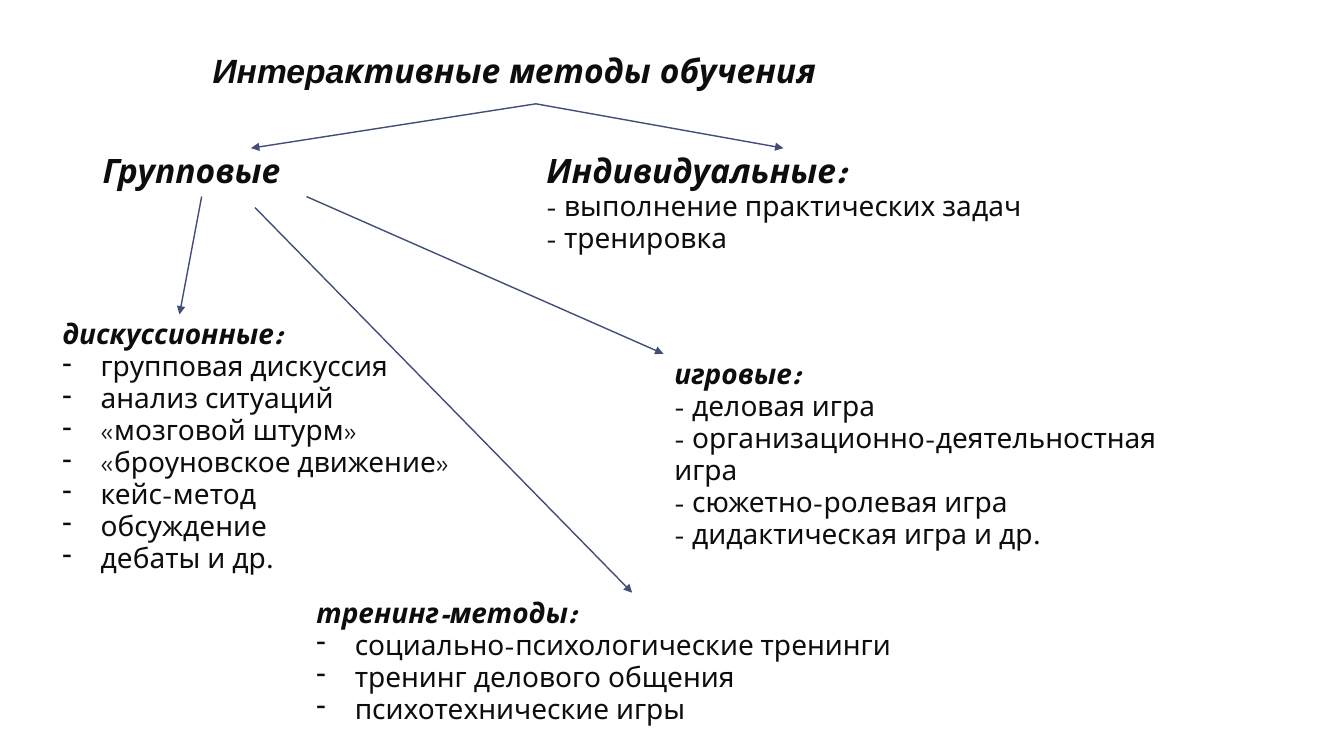
from dataclasses import dataclass

import pptx
import pptx.dml.color
import pptx.enum.dml
import pptx.enum.shapes
import pptx.enum.text
import pptx.oxml
import pptx.oxml.ns
import pptx.shapes.autoshape
import pptx.shapes.connector
import pptx.slide
import pptx.util
from lxml import etree

EMU_PER_PX = 9144
INK = pptx.dml.color.RGBColor(0x0D, 0x0D, 0x0D)
ARROW = pptx.dml.color.RGBColor(0x41, 0x4E, 0x77)
FONT = "League Spartan"
TITLE_SIZE = 24
BODY_SIZE = 20
INDENT = 38
BOTTOM = 2


@dataclass(frozen=True)
class Block:
    left: int
    top: int
    width: int
    height: int
    heading: str
    items: tuple[str, ...] = ()
    heading_size: int = BODY_SIZE
    bulleted: bool = False


@dataclass(frozen=True)
class Arrow:
    start: tuple[int, int]
    end: tuple[int, int]
    from_title: bool = False


BLOCKS = (
    Block(92, 147, 283, 48, "Групповые", heading_size=TITLE_SIZE),
    Block(532, 147, 528, 112, "Индивидуальные:",
          ("- выполнение практических задач", "- тренировка"),
          heading_size=TITLE_SIZE),
    Block(52, 312, 449, 266, "дискуссионные:",
          ("групповая дискуссия", "анализ ситуаций", "«мозговой штурм»",
           "«броуновское движение»", "кейс-метод", "обсуждение",
           "дебаты и др."),
          bulleted=True),
    Block(659, 351, 528, 247, "игровые:",
          ("- деловая игра", "- организационно-деятельностная игра",
           "- сюжетно-ролевая игра", "- дидактическая игра и др.")),
    Block(304, 588, 819, 138, "тренинг-методы:",
          ("социально-психологические тренинги",
           "тренинг делового общения", "психотехнические игры"),
          bulleted=True),
)

ARROWS = (
    Arrow((531, 103), (249, 147), from_title=True),
    Arrow((531, 103), (777, 147), from_title=True),
    Arrow((200, 195), (178, 312)),
    Arrow((253, 206), (627, 588)),
    Arrow((304, 195), (658, 351)),
)


def px(length: int) -> pptx.util.Emu:
    return pptx.util.Emu(length * EMU_PER_PX)


def style_paragraph(para, size: int, strong: bool) -> None:
    para.font.size = pptx.util.Pt(size)
    para.font.bold = strong
    para.font.italic = strong
    para.font.color.rgb = INK


def add_bullet(para) -> None:
    properties = para._p.get_or_add_pPr()
    properties.set("marL", str(px(INDENT)))
    properties.set("indent", str(-px(INDENT)))
    bullet = etree.SubElement(properties, pptx.oxml.ns.qn("a:buChar"))
    bullet.set("char", "-")


def add_title(page: pptx.slide.Slide) -> pptx.shapes.autoshape.Shape:
    box = page.shapes.add_textbox(px(201), px(36), px(661), px(67))
    frame = box.text_frame
    frame.word_wrap = True
    frame.vertical_anchor = pptx.enum.text.MSO_ANCHOR.MIDDLE
    para = frame.paragraphs[0]
    style_paragraph(para, TITLE_SIZE, True)
    for text, font in (("Интера", "Arial"), ("ктивные методы обучения", FONT)):
        span = para.add_run()
        span.text = text
        span.font.name = font
    return box


def add_block(page: pptx.slide.Slide, block: Block) -> None:
    box = page.shapes.add_textbox(
        px(block.left), px(block.top), px(block.width), px(block.height))
    frame = box.text_frame
    frame.word_wrap = True
    frame.auto_size = pptx.enum.text.MSO_AUTO_SIZE.SHAPE_TO_FIT_TEXT
    for index, text in enumerate((block.heading, *block.items)):
        is_heading = index == 0
        para = frame.paragraphs[0] if is_heading else frame.add_paragraph()
        para.text = text
        para.line_spacing = 0.95
        if block.bulleted and not is_heading:
            add_bullet(para)
        para.font.name = FONT
        style_paragraph(
            para, block.heading_size if is_heading else BODY_SIZE, is_heading)


def add_arrow(page: pptx.slide.Slide, arrow: Arrow,
              title: pptx.shapes.autoshape.Shape) -> None:
    line = page.shapes.add_connector(
        pptx.enum.shapes.MSO_CONNECTOR.STRAIGHT,
        *map(px, arrow.start), *map(px, arrow.end))
    if arrow.from_title:
        line.begin_connect(title, BOTTOM)
    line.line.color.rgb = ARROW
    line.line.width = pptx.util.Pt(1)
    head = etree.SubElement(
        line.line._get_or_add_ln(), pptx.oxml.ns.qn("a:tailEnd"))
    head.set("type", "triangle")
    etree.SubElement(line._element.spPr, pptx.oxml.ns.qn("a:effectLst"))


def main() -> None:
    deck = pptx.Presentation()
    deck.slide_width = px(1333)
    deck.slide_height = px(750)
    page = deck.slides.add_slide(deck.slide_layouts[6])
    title = add_title(page)
    for block in BLOCKS:
        add_block(page, block)
    for arrow in ARROWS:
        add_arrow(page, arrow, title)
    deck.save("out.pptx")


if __name__ == "__main__":
    main()
